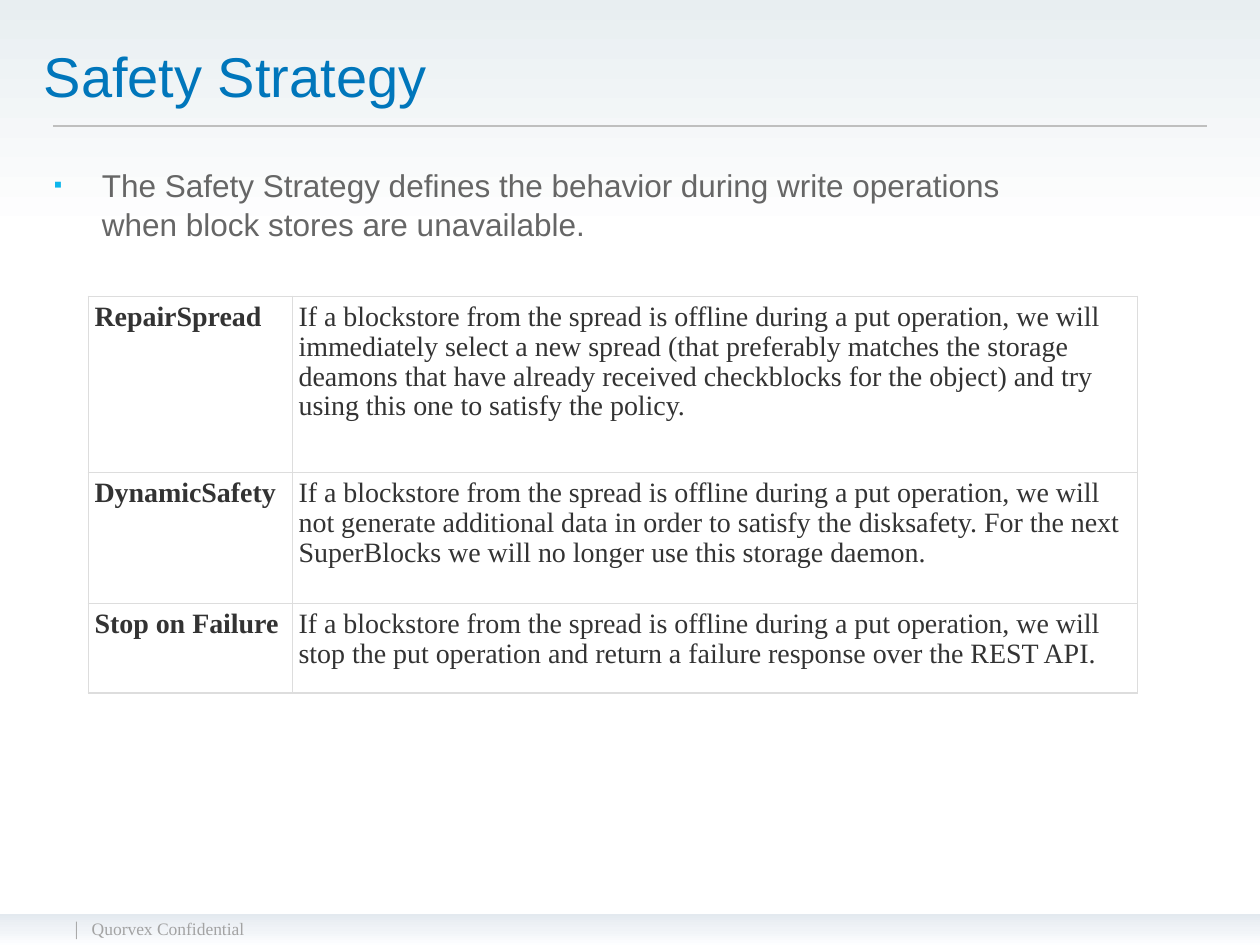
from collections import namedtuple

from lxml.etree import SubElement
from pptx import Presentation
from pptx.dml.color import RGBColor
from pptx.enum.shapes import MSO_CONNECTOR as Connector, MSO_SHAPE as Shape
from pptx.enum.text import MSO_ANCHOR as Anchor
from pptx.oxml.ns import qn
from pptx.util import Emu, Inches, Pt

COLUMNS, ROWS = 100, 75
CELL = Inches(10) // COLUMNS
COLORS = {
    "title": "0076BB", "body": "666666", "bullet": "0DB6EC", "table": "333333",
    "border": "DDDDDD", "rule": "BFBFBF", "footer": "A3A3A3",
}
HEADER_STOPS = [(0, "E8EEF1"), (25, "FFFFFF")]
FOOTER_STOPS = [(0, "E3E9EF"), (50, "F0F3F7"), (100, "FDFEFF")]
STRATEGIES = [
    ("RepairSpread", 14,
     "If a blockstore from the spread is offline during a put operation, we will "
     "immediately select a new spread (that preferably matches the storage deamons "
     "that have already received checkblocks for the object) and try using this one "
     "to satisfy the policy."),
    ("DynamicSafety", 10.4,
     "If a blockstore from the spread is offline during a put operation, we will "
     "not generate additional data in order to satisfy the disksafety. For the next "
     "SuperBlocks we will no longer use this storage daemon."),
    ("Stop on Failure", 7.1,
     "If a blockstore from the spread is offline during a put operation, we will "
     "stop the put operation and return a failure response over the REST API."),
]
Box = namedtuple("Box", "left top width height")


def grid(*cells):
    """Turn grid cells into slide lengths."""
    return [Emu(round(cell * CELL)) for cell in cells]


def format_text(paragraph, size, color, font="Times New Roman", bold=False):
    """Format every run of a paragraph."""
    for run in paragraph.runs:
        run.font.size = Pt(size)
        run.font.name = font
        run.font.bold = bold
        run.font.color.rgb = RGBColor.from_string(COLORS[color])


def add_text(slide, box, text, size, color, font="Times New Roman", anchor=Anchor.TOP):
    """Add a wrapping text box and return its paragraph."""
    text_frame = slide.shapes.add_textbox(*grid(*box)).text_frame
    text_frame.word_wrap = True
    text_frame.vertical_anchor = anchor
    text_frame.text = text
    paragraph = text_frame.paragraphs[0]
    format_text(paragraph, size, color, font)
    return paragraph


def add_band(slide, box, stops):
    """Add a rectangle with a gradient running downwards."""
    shape = slide.shapes.add_shape(Shape.RECTANGLE, *grid(*box))
    shape.shadow.inherit = False
    shape.line.fill.background()
    shape.fill.gradient()
    shape.fill.gradient_angle = 270
    stop_list = shape._element.spPr.find(".//" + qn("a:gsLst"))
    for stop in list(stop_list):
        stop_list.remove(stop)
    for position, color in stops:
        stop = SubElement(stop_list, qn("a:gs"), pos=str(position * 1000))
        SubElement(stop, qn("a:srgbClr"), val=color)


def add_header(slide, box):
    """Place the title and the rule beneath it."""
    title = Box(box.left + 2.5, box.top + 2.5, 85, 7)
    add_text(slide, title, "Safety Strategy", 32, "title", "Arial", Anchor.MIDDLE)
    bottom = box.top + box.height
    line = slide.shapes.add_connector(
        Connector.STRAIGHT,
        *grid(box.left + 4.2, bottom, box.left + box.width - 4.2, bottom))
    line.line.color.rgb = RGBColor.from_string(COLORS["rule"])
    line.line.width = Pt(0.75)
    SubElement(line._element.spPr, qn("a:effectLst"))


def add_body(slide, box):
    """Place the bulleted definition."""
    paragraph = add_text(
        slide, box,
        "The Safety Strategy defines the behavior during write operations "
        "when block stores are unavailable.", 18, "body", "Arial")
    paragraph.line_spacing = 1.05
    properties = paragraph._p.get_or_add_pPr()
    indent = Inches(0.38)
    properties.set("marL", str(indent))
    properties.set("indent", str(-indent))
    bullet_color = SubElement(properties, qn("a:buClr"))
    SubElement(bullet_color, qn("a:srgbClr"), val=COLORS["bullet"])
    SubElement(properties, qn("a:buSzPct"), val="75000")
    SubElement(properties, qn("a:buFont"), typeface="Arial")
    SubElement(properties, qn("a:buChar"), char="▪")


def fill_cell(cell, text, bold):
    """Write one table cell with thin borders and no fill."""
    cell.margin_left = cell.margin_right = Inches(0.05)
    cell.margin_top = cell.margin_bottom = Inches(0.05)
    cell.text_frame.text = text
    paragraph = cell.text_frame.paragraphs[0]
    paragraph.line_spacing = 0.96
    format_text(paragraph, 16, "table", bold=bold)
    properties = cell._tc.get_or_add_tcPr()
    for side in ("a:lnL", "a:lnR", "a:lnT", "a:lnB"):
        border = SubElement(properties, qn(side), w=str(Pt(0.75)))
        fill = SubElement(border, qn("a:solidFill"))
        SubElement(fill, qn("a:srgbClr"), val=COLORS["border"])
    cell.fill.background()


def add_strategies(slide, box):
    """Place the table of strategies."""
    table = slide.shapes.add_table(len(STRATEGIES), 2, *grid(*box)).table
    table.first_row = table.horz_banding = False
    name_width = 16.2
    for column, width in zip(table.columns, grid(name_width, box.width - name_width)):
        column.width = width
    for row, (name, height, meaning) in zip(table.rows, STRATEGIES):
        row.height = grid(height)[0]
        fill_cell(row.cells[0], name, True)
        fill_cell(row.cells[1], meaning, False)


def add_footer(slide, box):
    """Place the footer band with its divider and notice."""
    add_band(slide, box, FOOTER_STOPS)
    notice = Box(box.left + 6.3, box.top - 0.1, 50, 4.7)
    add_text(slide, notice, "Quorvex Confidential", 10, "footer")
    divider = Box(box.left + 5, box.top - 0.3, 1.9, 2.7)
    add_text(slide, divider, "|", 11, "footer").runs[0].font.bold = False


def main():
    """Build and save the slide."""
    presentation = Presentation()
    presentation.slide_width, presentation.slide_height = grid(COLUMNS, ROWS)
    slide = presentation.slides.add_slide(presentation.slide_layouts[6])
    add_band(slide, Box(0, 0, COLUMNS, ROWS), HEADER_STOPS)
    add_footer(slide, Box(0, ROWS - 2.5, COLUMNS, 2.5))
    add_header(slide, Box(0, 0, COLUMNS, 10))
    add_body(slide, Box(3.3, 12.5, 82.5, 55))
    add_strategies(slide, Box(7, 23.5, 83.3, 31.5))
    presentation.save("out.pptx")


if __name__ == "__main__":
    main()
